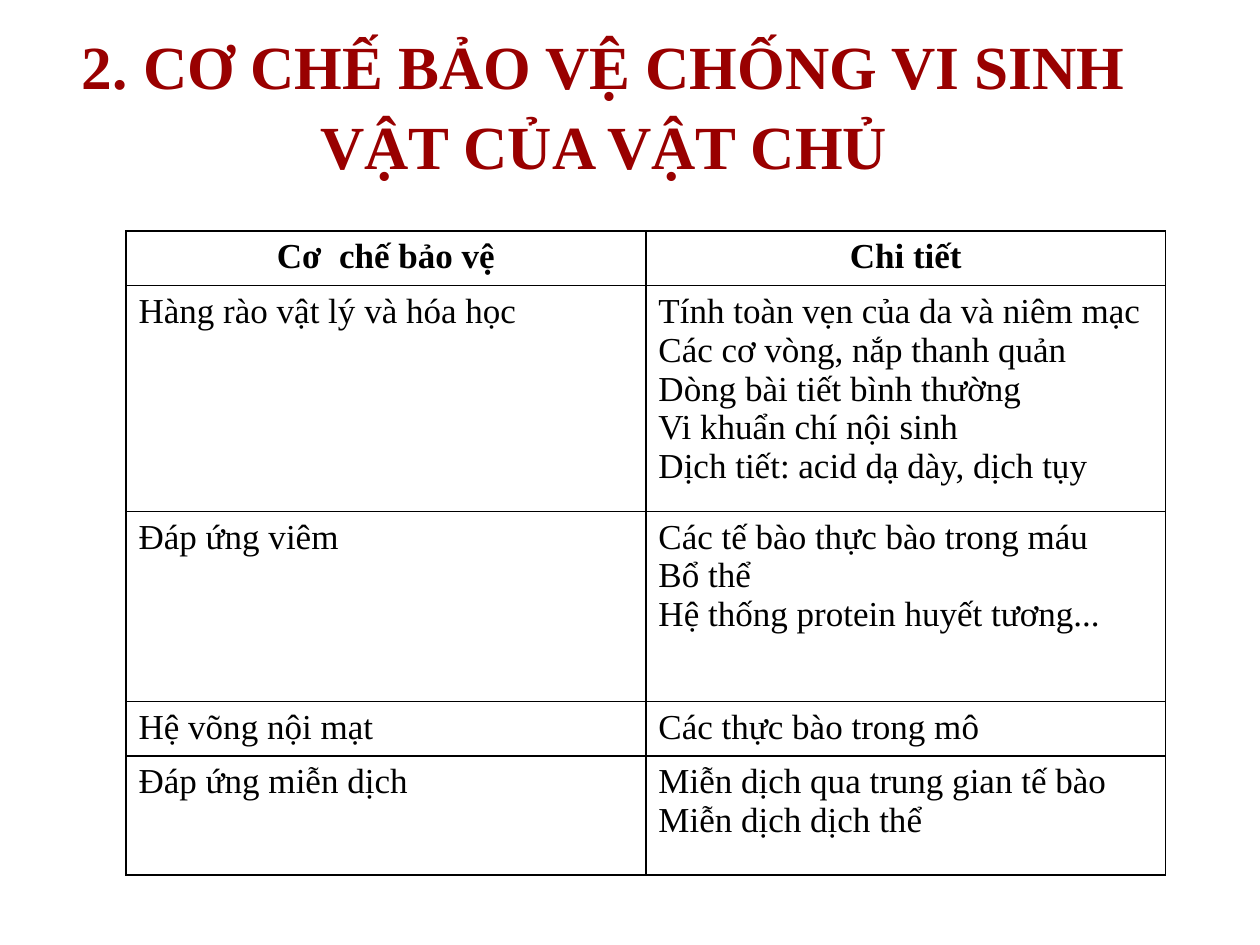
from lxml import etree
from pptx import Presentation
from pptx.dml.color import RGBColor
from pptx.enum.text import MSO_ANCHOR, MSO_AUTO_SIZE, PP_ALIGN
from pptx.oxml.ns import qn
from pptx.util import Cm, Pt

CENTER, LEFT = PP_ALIGN.CENTER, PP_ALIGN.LEFT
MIDDLE = MSO_ANCHOR.MIDDLE
NO_FIT = MSO_AUTO_SIZE.NONE
DARK_RED = RGBColor(0x99, 0x00, 0x00)
BLACK = RGBColor(0x00, 0x00, 0x00)
WHITE = RGBColor(0xFF, 0xFF, 0xFF)

TITLE = "2. CƠ CHẾ BẢO VỆ CHỐNG VI SINH VẬT CỦA VẬT CHỦ"
HEADER = ("Cơ  chế bảo vệ", ["Chi tiết"])
DEFENCES = [
    ("Hàng rào vật lý và hóa học", [
        "Tính toàn vẹn của da và niêm mạc",
        "Các cơ vòng, nắp thanh quản",
        "Dòng bài tiết bình thường",
        "Vi khuẩn chí nội sinh",
        "Dịch tiết: acid dạ dày, dịch tụy",
    ]),
    ("Đáp ứng viêm", [
        "Các tế bào thực bào trong máu",
        "Bổ thể",
        "Hệ thống protein huyết tương...",
    ]),
    ("Hệ võng nội mạt", ["Các thực bào trong mô"]),
    ("Đáp ứng miễn dịch", [
        "Miễn dịch qua trung gian tế bào",
        "Miễn dịch dịch thể",
    ]),
]
ROW_HEIGHTS = [1.1, 4.55, 3.83, 1.1, 2.4]


class SlideStyle:
    font_name = "Times New Roman"
    border_width = Pt(1)

    def __init__(self, page):
        self.page = page

    def text(self, frame, lines, align, color, **formats):
        for index, line in enumerate(lines):
            para = frame.paragraphs[0] if index == 0 else frame.add_paragraph()
            para.alignment = align
            span = para.add_run()
            span.text = line
            span.font.color.rgb = color
            for name, value in {"name": self.font_name, **formats}.items():
                setattr(span.font, name, value)

    def title(self, text, left, top, width, height):
        box = self.page.shapes.title
        places = {"left": left, "top": top, "width": width, "height": height}
        for name, value in places.items():
            setattr(box, name, Cm(value))
        frame = box.text_frame
        settings = {"word_wrap": True, "auto_size": NO_FIT, "vertical_anchor": MIDDLE}
        for name, value in settings.items():
            setattr(frame, name, value)
        self.text(frame, [text], CENTER, DARK_RED, size=Pt(35), bold=True)
        frame.paragraphs[0].line_spacing = 1.08

    def border(self, cell):
        properties = cell._tc.get_or_add_tcPr()
        for side in ("a:lnL", "a:lnR", "a:lnT", "a:lnB"):
            line = etree.SubElement(properties, qn(side), w=str(self.border_width))
            fill = etree.SubElement(line, qn("a:solidFill"))
            etree.SubElement(fill, qn("a:srgbClr"), val=str(BLACK))

    def table(self, rows, heights, left, top, width):
        box = self.page.shapes.add_table(
            len(rows), 2, Cm(left), Cm(top), Cm(width), Cm(sum(heights)))
        grid = box.table
        grid.first_row = grid.horz_banding = False
        for row, height in zip(grid.rows, heights):
            row.height = Cm(height)
        for index, (name, details) in enumerate(rows):
            is_header = index == 0
            align = CENTER if is_header else LEFT
            for column, lines in enumerate(([name], details)):
                cell = grid.cell(index, column)
                self.border(cell)
                cell.fill.solid()
                cell.fill.fore_color.rgb = WHITE
                self.text(cell.text_frame, lines, align, BLACK,
                          size=Pt(20), bold=is_header)


def main():
    deck = Presentation()
    deck.slide_width, deck.slide_height = Cm(25.4), Cm(19.05)
    style = SlideStyle(deck.slides.add_slide(deck.slide_layouts[5]))
    style.title(TITLE, 1.27, 0.43, 21.8, 3.25)
    style.table([HEADER, *DEFENCES], ROW_HEIGHTS, 2.54, 4.66, 20.96)
    deck.save("out.pptx")


if __name__ == "__main__":
    main()
